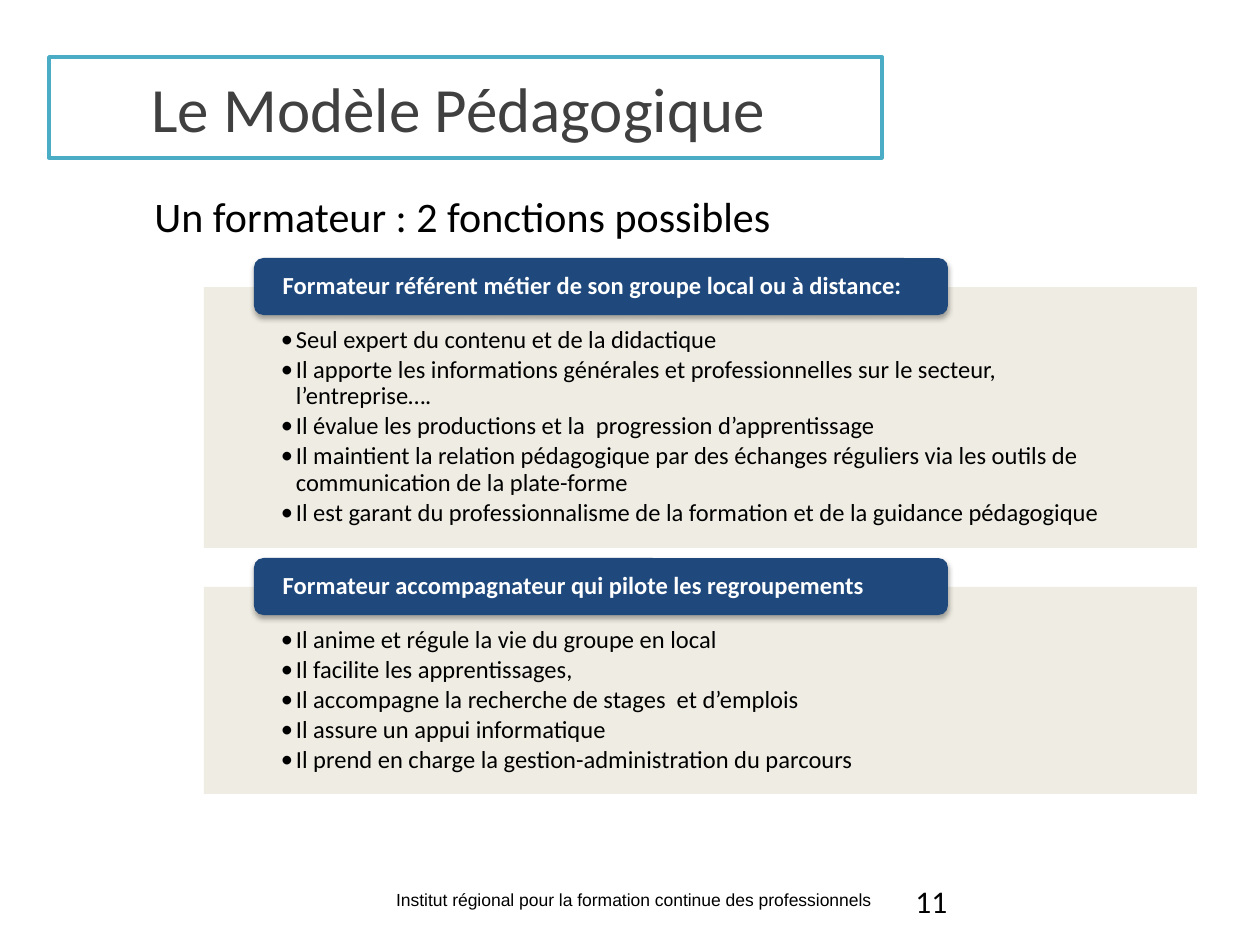
from dataclasses import dataclass
from typing import Any

from lxml.etree import SubElement
from pptx import Presentation
from pptx.dml.color import RGBColor
from pptx.enum.shapes import MSO_SHAPE
from pptx.enum.text import MSO_ANCHOR, PP_ALIGN
from pptx.oxml.ns import qn
from pptx.util import Emu, Pt

PX_PER_INCH = 126


def px(length: int) -> Emu:
    return Emu(round(length * 914400 / PX_PER_INCH))


@dataclass(frozen=True)
class Theme:
    ink: str = "000000"
    title_ink: str = "404040"
    white: str = "FFFFFF"
    frame: str = "4BACC6"
    panel: str = "EEECE1"
    heading: str = "1F497D"
    body_font: str = "Calibri"
    footer_font: str = "Arial"
    title_size: int = 36
    subtitle_size: int = 24
    number_size: int = 18
    body_size: int = 14
    footer_size: int = 10


@dataclass(frozen=True)
class Box:
    left: int
    top: int
    width: int
    height: int

    def emu(self) -> tuple[Emu, ...]:
        return tuple(px(side) for side in (self.left, self.top, self.width, self.height))


@dataclass(frozen=True)
class Role:
    heading: str
    duties: tuple[str, ...]
    top: int
    height: int


THEME = Theme()

ROLES = (
    Role(
        "Formateur référent métier de son groupe local ou à distance:",
        (
            "Seul expert du contenu et de la didactique",
            "Il apporte les informations générales et professionnelles sur le secteur, l’entreprise….",
            "Il évalue les productions et la  progression d’apprentissage",
            "Il maintient la relation pédagogique par des échanges réguliers via les outils de communication de la plate-forme",
            "Il est garant du professionnalisme de la formation et de la guidance pédagogique",
        ),
        287,
        261,
    ),
    Role(
        "Formateur accompagnateur qui pilote les regroupements",
        (
            "Il anime et régule la vie du groupe en local",
            "Il facilite les apprentissages,",
            "Il accompagne la recherche de stages  et d’emplois",
            "Il assure un appui informatique",
            "Il prend en charge la gestion-administration du parcours",
        ),
        587,
        207,
    ),
)


def apply(target: Any, formats: dict[str, Any]) -> None:
    for attribute, setting in formats.items():
        setattr(target, attribute, setting)


def write(paragraph: Any, wording: str, size: int, color: str = THEME.ink,
          font: str = THEME.body_font, bold: bool = False) -> None:
    run = paragraph.add_run()
    run.text = wording
    apply(run.font, {"name": font, "size": Pt(size), "bold": bold})
    run.font.color.rgb = RGBColor.from_string(color)


def add_label(slide: Any, box: Box, wording: str, size: int,
              font: str = THEME.body_font, align: PP_ALIGN = PP_ALIGN.LEFT) -> None:
    frame = slide.shapes.add_textbox(*box.emu()).text_frame
    frame.word_wrap = True
    frame.paragraphs[0].alignment = align
    write(frame.paragraphs[0], wording, size, font=font)


def add_block(slide: Any, kind: MSO_SHAPE, box: Box, fill: str) -> Any:
    block = slide.shapes.add_shape(kind, *box.emu())
    block.shadow.inherit = False
    block.fill.solid()
    block.fill.fore_color.rgb = RGBColor.from_string(fill)
    block.line.fill.background()
    return block


def add_title(slide: Any, wording: str) -> None:
    title = add_block(slide, MSO_SHAPE.RECTANGLE, Box(49, 57, 833, 101), THEME.white)
    title.line.color.rgb = RGBColor.from_string(THEME.frame)
    title.line.width = Pt(2)
    title.text_frame.vertical_anchor = MSO_ANCHOR.MIDDLE
    title.text_frame.paragraphs[0].alignment = PP_ALIGN.CENTER
    write(title.text_frame.paragraphs[0], wording, THEME.title_size, THEME.title_ink)


def set_alpha(color: Any, percent: int) -> None:
    SubElement(color, qn("a:alpha"), val=str(percent * 1000))


def add_bullet(paragraph: Any) -> None:
    properties = paragraph._p.get_or_add_pPr()
    indent = px(15)
    properties.set("marL", str(indent))
    properties.set("indent", str(-indent))
    SubElement(properties, qn("a:buFont"), typeface=THEME.body_font)
    SubElement(properties, qn("a:buChar"), char="•")


def add_shadow(block: Any) -> None:
    effects = block._element.spPr.find(qn("a:effectLst"))
    shadow = SubElement(effects, qn("a:outerShdw"), blurRad=str(Pt(3.1)),
                        dist=str(Pt(1.8)), dir="5400000", rotWithShape="0")
    set_alpha(SubElement(shadow, qn("a:srgbClr"), val=THEME.ink), 35)


def add_panel(slide: Any, role: Role) -> None:
    panel = add_block(slide, MSO_SHAPE.RECTANGLE,
                      Box(204, role.top, 993, role.height), THEME.panel)
    set_alpha(panel._element.spPr.find(".//" + qn("a:srgbClr")), 90)
    frame = panel.text_frame
    apply(frame, {
        "word_wrap": True, "vertical_anchor": MSO_ANCHOR.TOP,
        "margin_left": px(77), "margin_right": px(77),
        "margin_top": px(40), "margin_bottom": px(14),
    })
    for position, duty in enumerate(role.duties):
        paragraph = frame.add_paragraph() if position else frame.paragraphs[0]
        apply(paragraph, {"alignment": PP_ALIGN.LEFT, "line_spacing": 0.9,
                          "space_after": Pt(2), "level": 1})
        add_bullet(paragraph)
        write(paragraph, duty, THEME.body_size)


def add_heading(slide: Any, role: Role) -> None:
    heading = add_block(slide, MSO_SHAPE.ROUNDED_RECTANGLE,
                        Box(254, role.top - 29, 694, 57), THEME.heading)
    add_shadow(heading)
    frame = heading.text_frame
    apply(frame, {
        "word_wrap": True, "vertical_anchor": MSO_ANCHOR.MIDDLE,
        "margin_left": px(26), "margin_right": px(26),
        "margin_top": 0, "margin_bottom": 0,
    })
    apply(frame.paragraphs[0], {"alignment": PP_ALIGN.LEFT, "line_spacing": 0.9})
    write(frame.paragraphs[0], role.heading, THEME.body_size, THEME.white, bold=True)


def main() -> None:
    deck = Presentation()
    apply(deck, {"slide_width": px(1260), "slide_height": px(945)})
    slide = deck.slides.add_slide(deck.slide_layouts[6])
    add_label(slide, Box(26, 883, 1215, 34),
              "Institut régional pour la formation continue des professionnels",
              THEME.footer_size, THEME.footer_font, PP_ALIGN.CENTER)
    add_title(slide, "Le Modèle Pédagogique ")
    add_label(slide, Box(903, 876, 294, 50), "11", THEME.number_size)
    for role in ROLES:
        add_panel(slide, role)
        add_heading(slide, role)
    add_label(slide, Box(142, 184, 740, 102),
              "Un formateur : 2 fonctions possibles", THEME.subtitle_size)
    deck.save("out.pptx")


if __name__ == "__main__":
    main()
